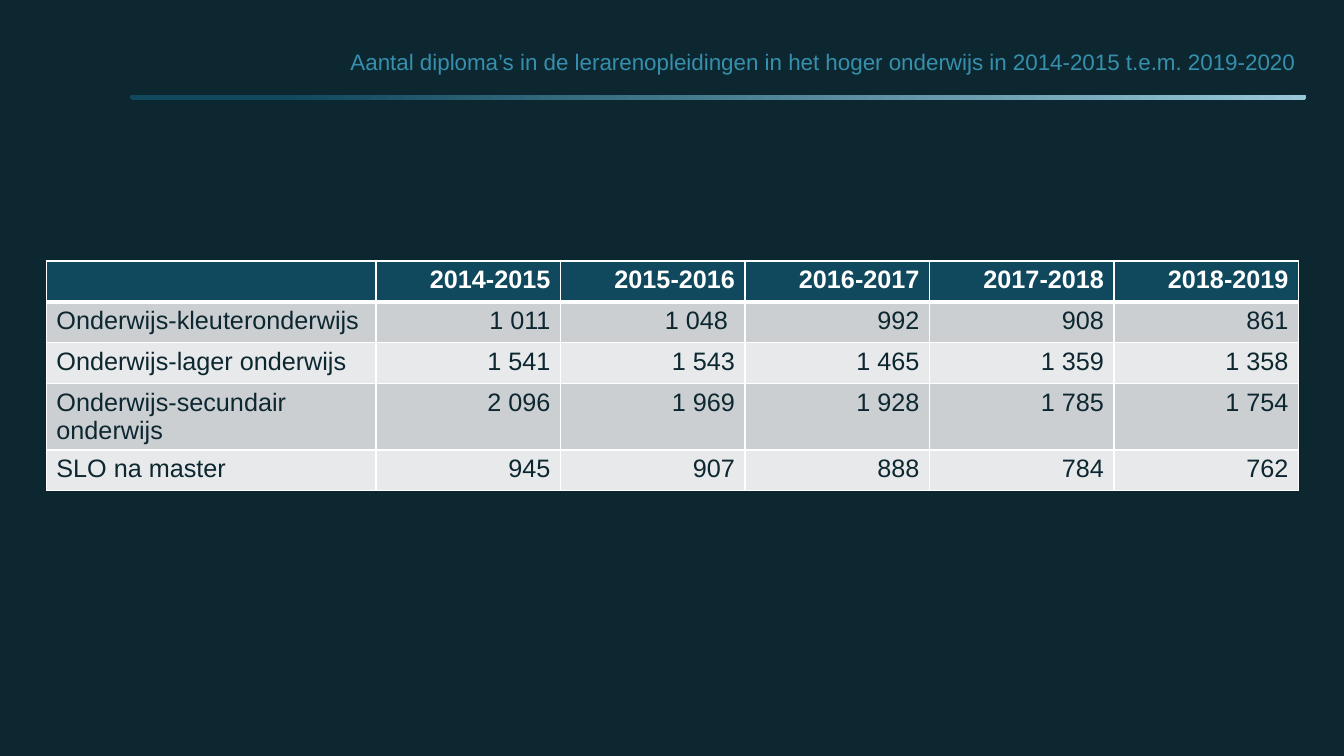
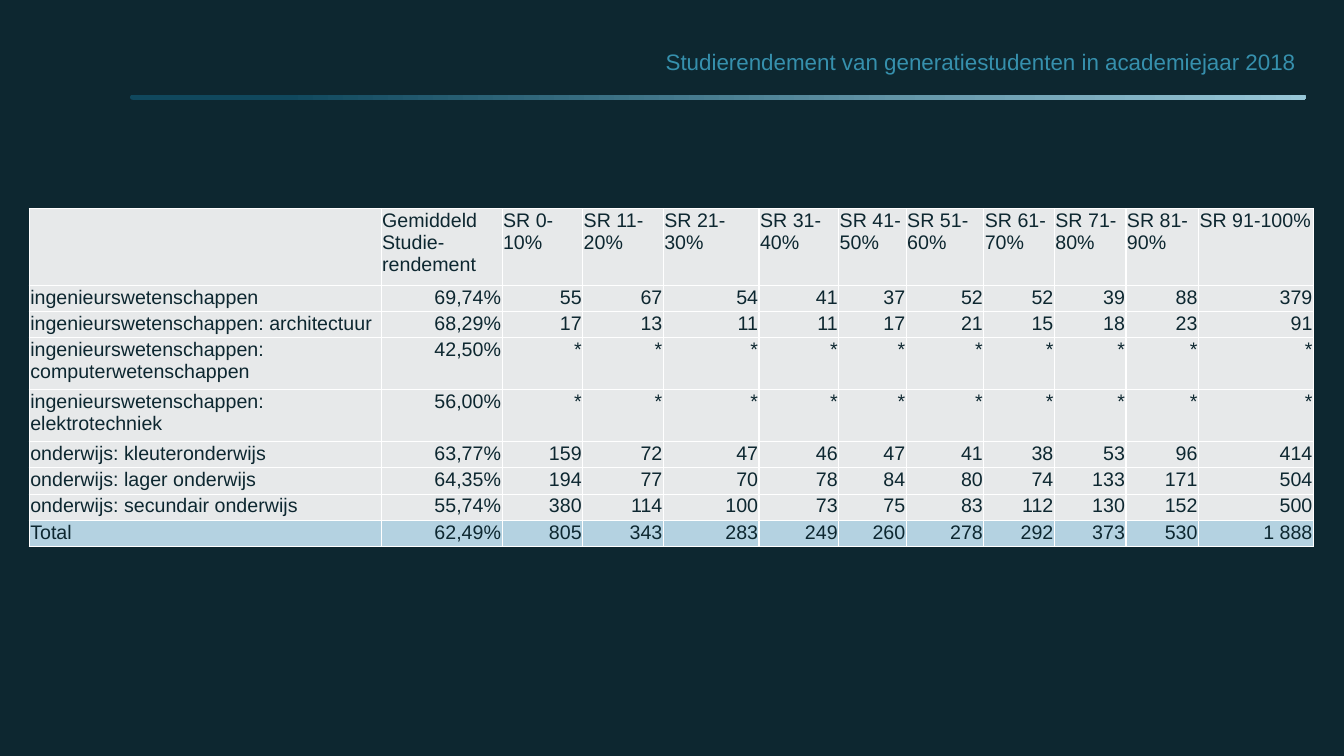
from lxml.etree import SubElement
from pptx import Presentation
from pptx.dml.color import RGBColor
from pptx.enum.shapes import MSO_SHAPE
from pptx.enum.text import MSO_ANCHOR, MSO_AUTO_SIZE, PP_ALIGN
from pptx.oxml.ns import qn
from pptx.util import Inches, Pt

NIGHT, PETROL, SKY, TITLE_BLUE = "0D2730", "10485D", "97C7D8", "3690AD"
WHITE, GREY, PALE, TOTAL_BLUE = "FFFFFF", "CCCFD2", "E7E9EA", "B4D2E1"
TITLE_ONLY = 5

DIPLOMAS = [
    ["", "2014-2015", "2015-2016", "2016-2017", "2017-2018", "2018-2019"],
    ["Onderwijs-kleuteronderwijs", "1 011", "1 048 ", "992", "908", "861"],
    ["Onderwijs-lager onderwijs", "1 541", "1 543", "1 465", "1 359", "1 358"],
    ["Onderwijs-secundair onderwijs", "2 096", "1 969", "1 928", "1 785", "1 754"],
    ["SLO na master", "945", "907", "888", "784", "762"],
]

RANGES = ["0-10", "11-20", "21-30", "31-40", "41-50",
          "51-60", "61-70", "71-80", "81-90", "91-100"]
HIDDEN = ["*"] * len(RANGES)
STUDY_RESULTS = [
    ["", "Gemiddeld Studie-rendement"] + [f"SR {span}%" for span in RANGES],
    ["ingenieurswetenschappen", "69,74%",
     "55", "67", "54", "41", "37", "52", "52", "39", "88", "379"],
    ["ingenieurswetenschappen: architectuur", "68,29%",
     "17", "13", "11", "11", "17", "21", "15", "18", "23", "91"],
    ["ingenieurswetenschappen: computerwetenschappen", "42,50%"] + HIDDEN,
    ["ingenieurswetenschappen: elektrotechniek", "56,00%"] + HIDDEN,
    ["onderwijs: kleuteronderwijs", "63,77%",
     "159", "72", "47", "46", "47", "41", "38", "53", "96", "414"],
    ["onderwijs: lager onderwijs", "64,35%",
     "194", "77", "70", "78", "84", "80", "74", "133", "171", "504"],
    ["onderwijs: secundair onderwijs", "55,74%",
     "380", "114", "100", "73", "75", "83", "112", "130", "152", "500"],
    ["Total", "62,49%",
     "805", "343", "283", "249", "260", "278", "292", "373", "530", "1 888"],
]


def color(value):
    return RGBColor.from_string(value)


def apply(target, values):
    for name, value in values.items():
        setattr(target, name, value)


class Report:
    font = "Arial"

    def __init__(self):
        self.deck = Presentation()
        apply(self.deck, {"slide_width": Inches(13.33), "slide_height": Inches(7.5)})
        self.layout = self.deck.slide_layouts[TITLE_ONLY]
        self.layout.background.fill.solid()
        self.layout.background.fill.fore_color.rgb = color(NIGHT)
        self.slide = None

    def across(self, percent):
        return round(self.deck.slide_width * percent / 100)

    def down(self, percent):
        return round(self.deck.slide_height * percent / 100)

    def area(self, left, top, width, height):
        return (self.across(left), self.down(top),
                self.across(width), self.down(height))

    def page(self, title):
        first = self.slide is None
        self.slide = self.deck.slides.add_slide(self.layout)
        if first:
            self.shared_rule()
        self.title(title)

    def shared_rule(self):
        rule = self.slide.shapes.add_shape(
            MSO_SHAPE.ROUNDED_RECTANGLE, *self.area(9.68, 12.53, 87.47, 0.67))
        rule.adjustments[0] = 0.5
        rule.shadow.inherit = False
        rule.line.fill.background()
        rule.fill.gradient()
        rule.fill.gradient_angle = 0
        stops = [(0.13, PETROL), (1, SKY)]
        for stop, (position, shade) in zip(rule.fill.gradient_stops, stops):
            stop.position = position
            stop.color.rgb = color(shade)
        self.layout.shapes.element.append(rule.element)

    def title(self, text):
        box = self.slide.shapes.title
        left, top, width, height = self.area(16.28, 4.13, 80.87, 8.4)
        apply(box, {"left": left, "top": top, "width": width, "height": height})
        apply(box.text_frame, {"word_wrap": True, "auto_size": MSO_AUTO_SIZE.NONE,
                               "vertical_anchor": MSO_ANCHOR.MIDDLE})
        para = box.text_frame.paragraphs[0]
        para.line_spacing = 0.9
        self.add_text(para, text, 16, TITLE_BLUE, PP_ALIGN.RIGHT)

    def add_text(self, para, text, size, shade, align, bold=False):
        para.alignment = align
        span = para.add_run()
        span.text = text
        apply(span.font, {"name": self.font, "size": Pt(size), "bold": bold})
        span.font.color.rgb = color(shade)

    def borders(self, cell, widths):
        properties = cell._tc.get_or_add_tcPr()
        for side in ("L", "R", "T", "B"):
            line = SubElement(properties, qn(f"a:ln{side}"),
                              w=str(Pt(widths.get(side, 1))))
            SubElement(SubElement(line, qn("a:solidFill")),
                       qn("a:srgbClr"), val=WHITE)

    def table(self, rows, place, weights, heights, style):
        left, top, width = place
        frame = self.slide.shapes.add_table(
            len(rows), len(weights), *self.area(left, top, width, sum(heights)))
        table = frame.table
        apply(table, {"first_row": False, "horz_banding": False})
        for column, weight in zip(table.columns, weights):
            column.width = self.across(width * weight / sum(weights))
        for row, height in zip(table.rows, heights):
            row.height = self.down(height)
        for row_index, texts in enumerate(rows):
            for column_index, text in enumerate(texts):
                look = style(row_index, column_index)
                cell = table.cell(row_index, column_index)
                self.borders(cell, look.get("borders", {}))
                apply(cell, look.get("margins", {}))
                cell.fill.solid()
                cell.fill.fore_color.rgb = color(look["fill"])
                if text:
                    self.add_text(cell.text_frame.paragraphs[0], text, **look["text"])


def diploma_style(row, column):
    header = row == 0
    text = {"size": 18, "shade": WHITE if header else NIGHT, "bold": header,
            "align": PP_ALIGN.RIGHT if column else PP_ALIGN.LEFT}
    fill = PETROL if header else (PALE, GREY)[row % 2]
    return {"text": text, "fill": fill, "borders": {0: {"B": 3}, 1: {"T": 3}}.get(row, {})}


def study_style(row, column):
    edge = Inches(0.01)
    text = {"size": 14, "shade": NIGHT,
            "align": PP_ALIGN.RIGHT if row and column else PP_ALIGN.LEFT}
    margins = {"margin_left": edge, "margin_right": edge,
               "margin_top": edge, "margin_bottom": 0}
    fill = TOTAL_BLUE if row == len(STUDY_RESULTS) - 1 else PALE
    return {"text": text, "fill": fill, "margins": margins}


def main():
    report = Report()
    report.page("Aantal diploma’s in de lerarenopleidingen in het hoger onderwijs "
                "in 2014-2015 t.e.m. 2019-2020")
    report.table(DIPLOMAS, (3.45, 34.53, 93.17), [3.27] + [1.83] * 5,
                 [5.4] * len(DIPLOMAS), diploma_style)

    report.page("Studierendement van generatiestudenten in academiejaar 2018")
    single, double = 3.48, 6.87
    report.table(STUDY_RESULTS, (2.18, 27.6, 95.57),
                 [3.49, 1.2, 0.8, 0.8, 0.95, 0.79, 0.67, 0.77, 0.7, 0.71, 0.72, 1.14],
                 [10.13] + [single] * 2 + [double] * 2 + [single] * 4, study_style)
    report.deck.save("out.pptx")


if __name__ == "__main__":
    main()
